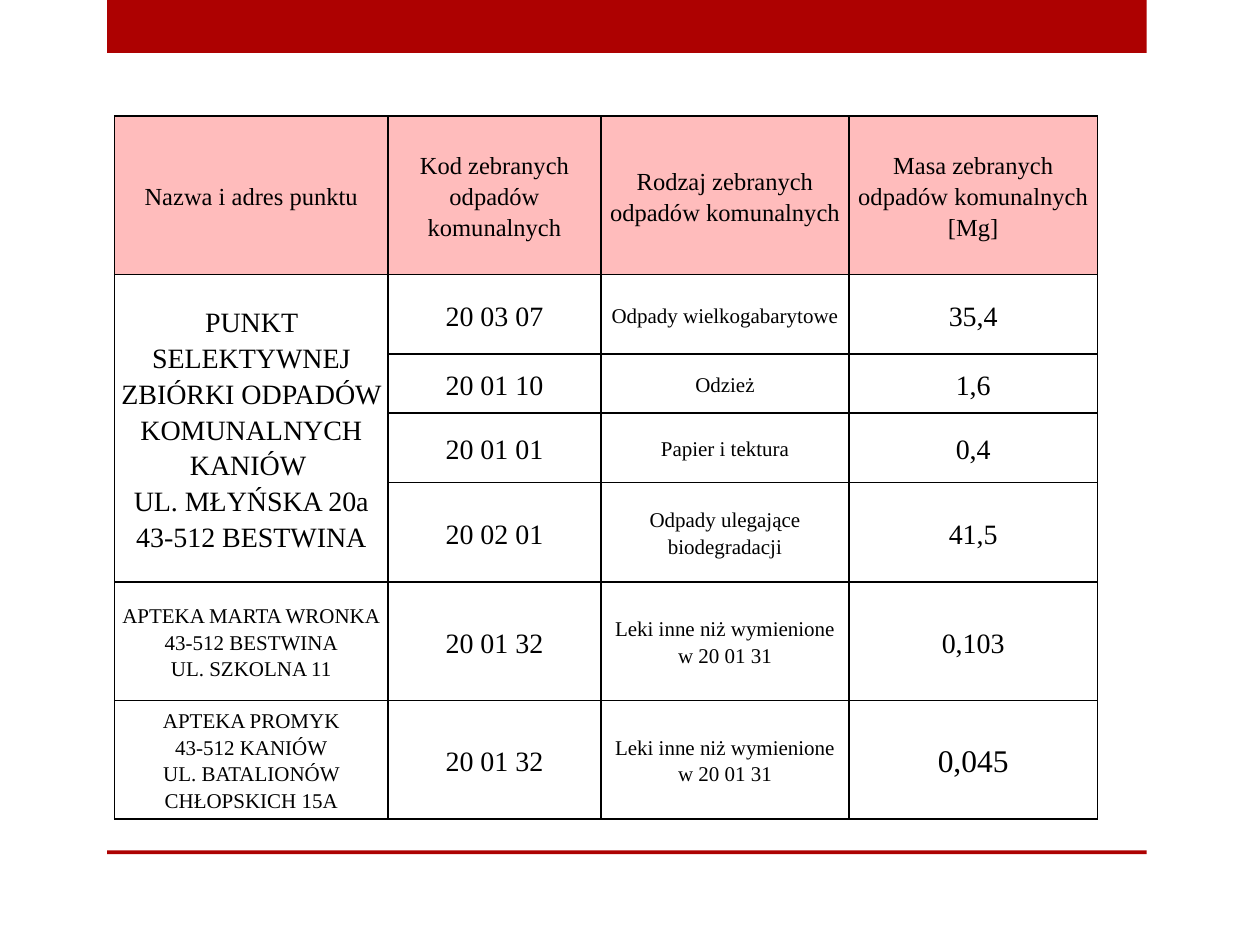
import lxml.etree
import pptx
import pptx.dml.color
import pptx.enum.shapes
import pptx.enum.text
import pptx.oxml.ns
import pptx.util

Inches = pptx.util.Inches
Pt = pptx.util.Pt
qn = pptx.oxml.ns.qn
sub = lxml.etree.SubElement


def tint(code):
    return pptx.dml.color.RGBColor.from_string(code)


def assign(item, form):
    for key, value in form.items():
        setattr(item, key, value)


class Deck:
    """Holds the style and the current slide."""

    font = "Times New Roman"
    red = "AD0101"
    pink = "FFBCBC"
    ink = "000000"
    para = {"alignment": pptx.enum.text.PP_ALIGN.CENTER, "line_spacing": 1.15}
    frame = {
        "vertical_anchor": pptx.enum.text.MSO_ANCHOR.MIDDLE,
        "margin_left": Inches(0.05),
        "margin_right": Inches(0.05),
        "margin_top": 0,
        "margin_bottom": 0,
    }

    def __init__(self):
        self.prs = pptx.Presentation()
        assign(self.prs, {"slide_width": Inches(10), "slide_height": Inches(7.5)})
        self.slide = self.prs.slides.add_slide(self.prs.slide_layouts[6])

    def bar(self, top, height):
        kind = pptx.enum.shapes.MSO_SHAPE.RECTANGLE
        bar = self.slide.shapes.add_shape(
            kind, Inches(0.85), Inches(top), Inches(8.25), Inches(height))
        bar.shadow.inherit = False
        bar.fill.solid()
        bar.fill.fore_color.rgb = tint(self.red)
        bar.line.fill.background()

    def border(self, cell):
        props = cell._tc.get_or_add_tcPr()
        for side in ("a:lnL", "a:lnR", "a:lnT", "a:lnB"):
            line = sub(props, qn(side), w=str(Pt(1)))
            fill = sub(line, qn("a:solidFill"))
            sub(fill, qn("a:srgbClr"), val=self.ink)

    def label(self, cell, text, size, form):
        cell.text = text
        assign(cell, {**self.frame, **form})
        face = {"name": self.font, "size": Pt(size)}
        for para in cell.text_frame.paragraphs:
            assign(para, self.para)
            for run in para.runs:
                assign(run.font, face)
                run.font.color.rgb = tint(self.ink)
            for gap in para._p.findall(qn("a:br")):
                sub(gap, qn("a:rPr"), sz=str(size * 100))

    def table(self, left, top, cols, rows, data):
        grid = self.slide.shapes.add_table(
            len(rows), len(cols), Inches(left), Inches(top),
            Inches(sum(cols)), Inches(sum(rows))).table
        for col, width in zip(grid.columns, cols):
            col.width = Inches(width)
        for row, height in zip(grid.rows, rows):
            row.height = Inches(height)
        for r, line in enumerate(data):
            for c, entry in enumerate(line):
                cell = grid.cell(r, c)
                self.border(cell)
                if r == 0:
                    cell.fill.solid()
                    cell.fill.fore_color.rgb = tint(self.pink)
                else:
                    cell.fill.background()
                if entry:
                    form = {"margin_left": 0, "margin_right": 0} if r > 4 and c == 0 else {}
                    self.label(cell, *entry, form)
        return grid

    def save(self):
        self.prs.save("out.pptx")


def main():
    heads = [
        "Nazwa i adres punktu",
        "Kod zebranych odpadów komunalnych",
        "Rodzaj zebranych odpadów komunalnych",
        "Masa zebranych odpadów komunalnych\n[Mg]",
    ]
    point = ("PUNKT SELEKTYWNEJ ZBIÓRKI ODPADÓW KOMUNALNYCH KANIÓW "
             "\vUL. MŁYŃSKA 20a\n43-512 BESTWINA")
    shops = [
        "APTEKA MARTA WRONKA\v43-512 BESTWINA\vUL. SZKOLNA 11",
        "APTEKA PROMYK\v43-512 KANIÓW\vUL. BATALIONÓW CHŁOPSKICH 15A",
    ]
    drugs = "Leki inne niż wymienione w 20 01 31"
    waste = [
        ((point, 16), "20 03 07", "Odpady wielkogabarytowe", ("35,4", 16)),
        (None, "20 01 10", "Odzież", ("1,6", 16)),
        (None, "20 01 01", "Papier i tektura", ("0,4", 16)),
        (None, "20 02 01", "Odpady ulegające biodegradacji", ("41,5", 16)),
        ((shops[0], 12), "20 01 32", drugs, ("0,103", 16)),
        ((shops[1], 12), "20 01 32", drugs, ("0,045", 18)),
    ]
    data = [[(head, 14) for head in heads]]
    data += [[site, (code, 16), (sort, 12), mass] for site, code, sort, mass in waste]

    deck = Deck()
    deck.bar(0, 0.42)
    deck.bar(6.75, 0.03)
    grid = deck.table(0.91, 0.92, [2.17, 1.69, 1.97, 1.97],
                      [1.26, 0.63, 0.47, 0.55, 0.79, 0.94, 0.94], data)
    grid.cell(1, 0).merge(grid.cell(4, 0))
    deck.save()


if __name__ == "__main__":
    main()
